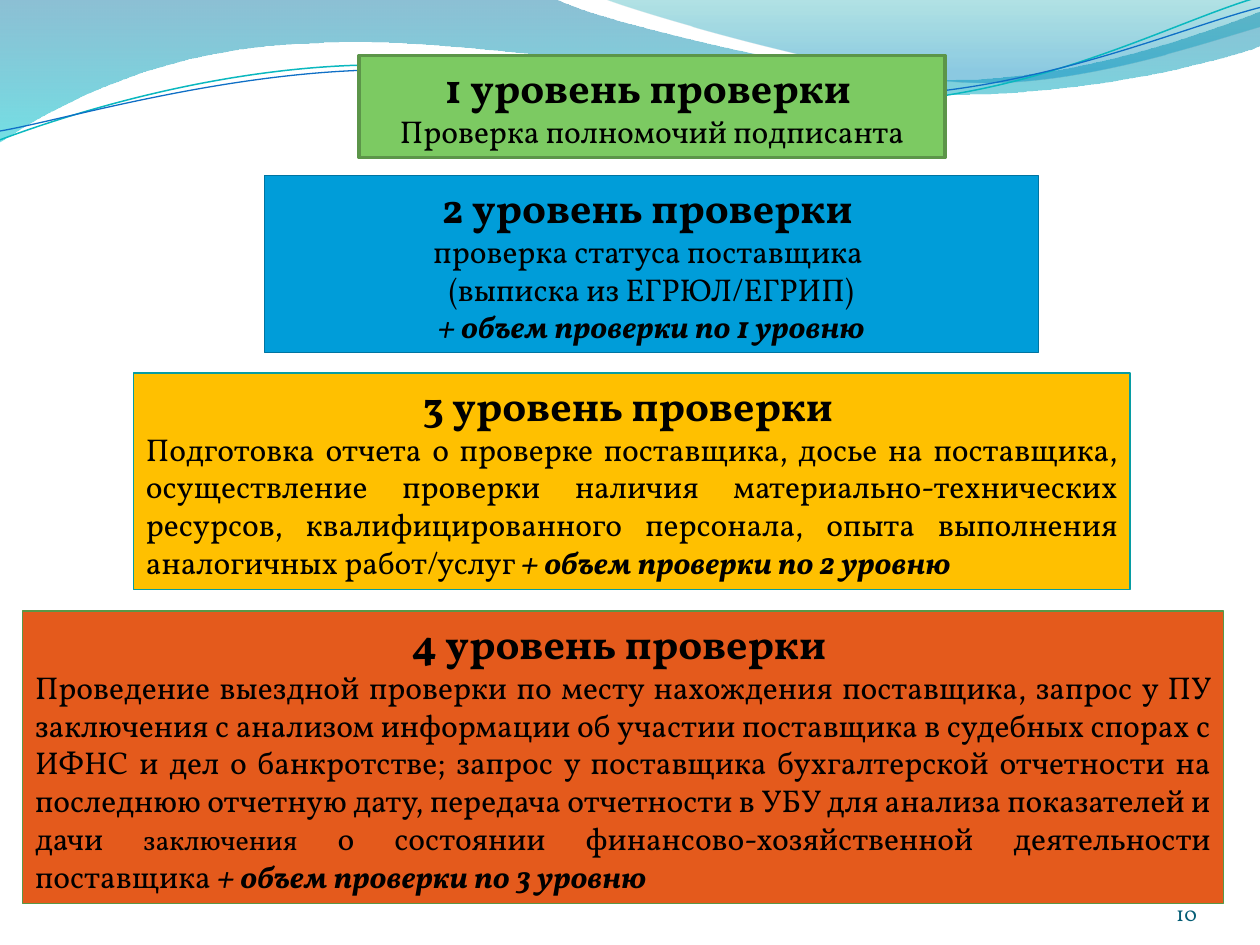
from dataclasses import dataclass
from math import cos, radians, sin
from typing import NamedTuple

from pptx import Presentation
from pptx.dml.color import RGBColor
from pptx.enum.shapes import MSO_SHAPE as Form
from pptx.enum.text import MSO_ANCHOR as Anchor, MSO_AUTO_SIZE as Fit, PP_ALIGN as Align
from pptx.oxml.ns import qn
from pptx.util import Inches, Pt
from lxml.etree import SubElement

COLS, ROWS = 10, 7.5
CELL = Inches(1)


@dataclass(frozen=True)
class Theme:
    font: str = "Vollkorn"
    head: int = 24
    body: int = 18
    small: int = 16
    page: int = 12
    ink: str = "000000"
    teal: str = "045D75"
    green: str = "7CCA62"
    blue: str = "009DD9"
    gold: str = "FFC000"
    rust: str = "E45A1C"
    moss: str = "5C9549"
    navy: str = "0074A1"
    sea: str = "069CA3"
    fern: str = "5B9747"
    aqua: str = "0AB8BF"
    royal: str = "0F6FC6"
    cyan: str = "00C6CF"
    jade: str = "00A1A9"
    azure: str = "008BBF"


LOOK = Theme()


class Bit(NamedTuple):
    text: str
    size: int = LOOK.body
    bold: bool = False
    slant: bool = False
    ink: str = LOOK.ink


class Para(NamedTuple):
    bits: list[Bit]
    align: Align = Align.CENTER


class Area(NamedTuple):
    col: float
    row: float
    wide: float
    high: float


class Level(NamedTuple):
    area: Area
    fill: str
    edge: str
    body: list[Para]
    width: float = 0.75


class Stop(NamedTuple):
    place: float
    tint: str
    alpha: int


class Wave(NamedTuple):
    start: tuple
    legs: list[tuple]
    stops: tuple = ()
    edge: str = ""
    width: float = 0
    hub: tuple = (0, 0)
    tilt: float = 0


def strong(text: str) -> Bit:
    return Bit(text, bold=True, slant=True)


WAVES = [
    Wave((0, 0), [
        (4.4, -0.01),
        (4.76, 0.17, 6.64, 0.63, 7.58, 0.63),
        (8.53, 0.63, 9.58, 0.26, 10, 0.09),
        (10.01, 0.36),
        (9.83, 0.44, 8.7, 0.76, 7.46, 0.75),
        (6.22, 0.75, 3.82, 0.28, 2.57, 0.34),
        (1.29, 0.36, 0.46, 0.83, -0.01, 1.13),
    ], (Stop(0, LOOK.navy, 45), Stop(1, LOOK.cyan, 55))),
    Wave((4.79, -0.01), [
        (5.09, 0.11, 6.82, 0.62, 7.69, 0.65),
        (8.56, 0.69, 9.61, 0.32, 10, 0.21),
        (10, 0),
    ], (Stop(0, LOOK.jade, 30), Stop(0.8, LOOK.azure, 45))),
    Wave((0, 1.11), [
        (0.48, 0.93, 1.58, 0.57, 2.77, 0.52),
        (3.95, 0.47, 5.93, 0.89, 7.13, 0.8),
        (8.33, 0.71, 9.38, 0.15, 9.98, -0.02),
    ], edge=LOOK.aqua, width=0.85, hub=(4.99, 0.58), tilt=-2.7),
    Wave((0, 1.04), [
        (0.47, 0.96, 1.64, 0.61, 2.83, 0.56),
        (4.03, 0.51, 5.97, 0.84, 7.17, 0.75),
        (8.36, 0.67, 9.41, 0.21, 10, 0.06),
    ], edge=LOOK.royal, width=0.75, hub=(5, 0.59), tilt=-2.7),
]

LEVELS = [
    Level(Area(2.85, 0.44, 4.65, 0.81), LOOK.green, LOOK.moss, [
        Para([Bit("Проверка полномочий подписанта")]),
    ], 2),
    Level(Area(2.1, 1.39, 6.14, 1.41), LOOK.blue, LOOK.navy, [
        Para([Bit("проверка статуса поставщика ")]),
        Para([Bit("(выписка из ЕГРЮЛ/ЕГРИП)")]),
        Para([strong(" + объем проверки по 1 уровню ")]),
    ]),
    Level(Area(1.06, 2.96, 7.91, 1.72), LOOK.gold, LOOK.sea, [
        Para([
            Bit("Подготовка отчета о проверке поставщика, досье на поставщика, "
                "осуществление проверки наличия материально-технических ресурсов, "
                "квалифицированного персонала, опыта выполнения аналогичных работ/услуг "),
            strong("+ объем проверки по 2 уровню"),
        ], Align.JUSTIFY),
    ]),
    Level(Area(0.18, 4.85, 9.53, 2.32), LOOK.rust, LOOK.fern, [
        Para([
            Bit("Проведение выездной проверки по месту нахождения поставщика, запрос у ПУ "
                "заключения с анализом информации об участии поставщика в судебных спорах "
                "с ИФНС и дел о банкротстве; запрос у поставщика бухгалтерской отчетности "
                "на последнюю отчетную дату, передача отчетности в УБУ для анализа "
                "показателей и дачи "),
            Bit("заключения", LOOK.small),
            Bit(" о состоянии финансово-хозяйственной деятельности поставщика "),
            strong("+ объем проверки по 3 уровню"),
        ], Align.JUSTIFY),
    ]),
]


def rgb(code: str) -> RGBColor:
    return RGBColor.from_string(code)


def span(area: Area) -> list[int]:
    return [round(part * CELL) for part in area]


def write(frame, paras: list[Para]) -> None:
    frame.word_wrap = True
    for rank, para in enumerate(paras):
        line = frame.add_paragraph() if rank else frame.paragraphs[0]
        line.alignment = para.align
        for bit in para.bits:
            run = line.add_run()
            run.text = bit.text
            font = run.font
            font.name, font.size = LOOK.font, Pt(bit.size)
            font.bold, font.italic = bit.bold, bit.slant
            font.color.rgb = rgb(bit.ink)


def level_out(spot: tuple, wave: Wave) -> tuple:
    turn = radians(-wave.tilt)
    x, y = spot[0] - wave.hub[0], spot[1] - wave.hub[1]
    return ((wave.hub[0] + x * cos(turn) - y * sin(turn)) * CELL,
            (wave.hub[1] + x * sin(turn) + y * cos(turn)) * CELL)


def bend(shape, legs: list[tuple]) -> None:
    lines = iter(list(shape.element.iter(qn("a:lnTo"))))
    for leg in legs:
        first = next(lines)
        if len(leg) == 6:
            curve = first.makeelement(qn("a:cubicBezTo"))
            first.addprevious(curve)
            for line in (first, next(lines), next(lines)):
                curve.append(line[0])
                line.getparent().remove(line)


def draw_wave(slide, wave: Wave) -> None:
    spots = [leg[i:i + 2] for leg in wave.legs for i in range(0, len(leg), 2)]
    pen = slide.shapes.build_freeform(*level_out(wave.start, wave))
    pen.add_line_segments([level_out(s, wave) for s in spots], close=bool(wave.stops))
    shape = pen.convert_to_shape()
    bend(shape, wave.legs)
    shape.rotation = wave.tilt
    shape.shadow.inherit = False
    if not wave.stops:
        shape.fill.background()
        shape.line.color.rgb = rgb(wave.edge)
        shape.line.width = Pt(wave.width)
        return
    shape.line.fill.background()
    shape.fill.gradient()
    shape.fill.gradient_angle = 270
    for slot, stop in zip(shape.fill.gradient_stops, wave.stops):
        slot.position = stop.place
        slot.color.rgb = rgb(stop.tint)
    tints = shape.element.spPr.iter(qn("a:srgbClr"))
    for tint, stop in zip(tints, wave.stops):
        SubElement(tint, qn("a:alpha")).set("val", str(stop.alpha * 1000))


def draw_level(slide, rank: int, level: Level) -> None:
    box = slide.shapes.add_shape(Form.RECTANGLE, *span(level.area))
    box.shadow.inherit = False
    box.fill.solid()
    box.fill.fore_color.rgb = rgb(level.fill)
    box.line.color.rgb = rgb(level.edge)
    box.line.width = Pt(level.width)
    box.text_frame.vertical_anchor = Anchor.TOP
    box.text_frame.auto_size = Fit.SHAPE_TO_FIT_TEXT
    head = Para([Bit(f"{rank} уровень проверки ", LOOK.head, True)])
    write(box.text_frame, [head, *level.body])


def draw_page(slide, area: Area, text: str) -> None:
    frame = slide.shapes.add_textbox(*span(area)).text_frame
    frame.margin_left = frame.margin_right = frame.margin_top = frame.margin_bottom = 0
    frame.vertical_anchor = Anchor.BOTTOM
    write(frame, [Para([Bit(text, LOOK.page, ink=LOOK.teal)], Align.RIGHT)])


def main() -> None:
    deck = Presentation()
    deck.slide_width, deck.slide_height = round(COLS * CELL), round(ROWS * CELL)
    slide = deck.slides.add_slide(deck.slide_layouts[6])
    for wave in WAVES:
        draw_wave(slide, wave)
    for rank, level in enumerate(LEVELS, 1):
        draw_level(slide, rank, level)
    draw_page(slide, Area(8.67, 6.95, 0.83, 0.4), "10")
    deck.save("out.pptx")


if __name__ == "__main__":
    main()
